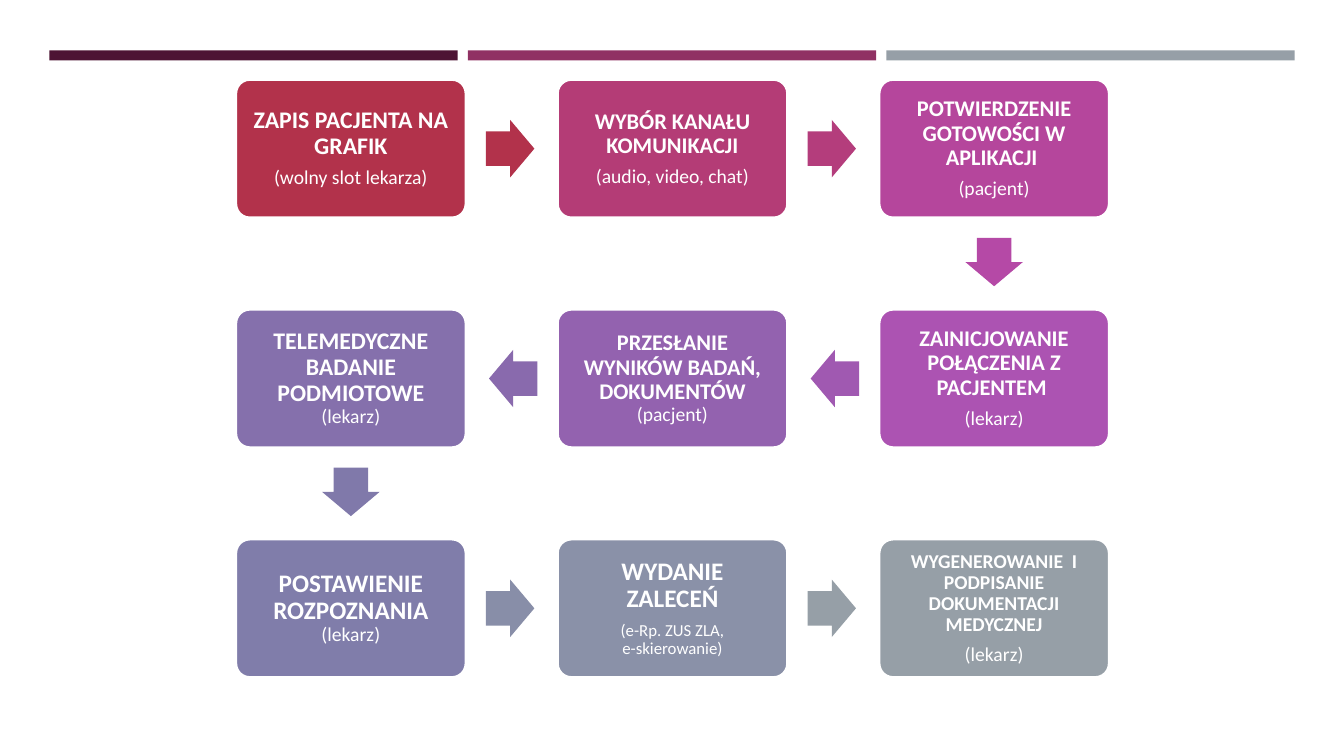
from pptx import Presentation
from pptx import util as u
from pptx.dml.color import RGBColor
from pptx.enum import shapes, text

WIDE, HIGH = 13.33, 7.5
LEFT, TOP = 2.34, 0.79
COL, ROW = 3.19, 2.28
BOX_W, BOX_H = 2.28, 1.37
ARM, SPAN, REACH = 0.48, 0.57, 0.44
INK = {
    "white": "FFFFFF",
    "bars": ["4D1434", "903163", "969FA7"],
    "boxes": ["B2324B", "B43C76", "B5469C", "AC53B2", "9362AF",
              "8570AC", "807DAA", "8A91A8", "969FA7"],
    "arrows": ["B2324B", "B43D7C", "B549A6", "A059B1", "896AAD",
               "8079AA", "888EA8", "969FA7"],
}
SPOTS = [(0, 0), (1, 0), (2, 0), (2, 1), (1, 1), (0, 1), (0, 2), (1, 2), (2, 2)]
TURNS = {(1, 0): 0, (0, 1): 90, (-1, 0): 180}
STEPS = [
    [[("ZAPIS PACJENTA NA GRAFIK", 17, True)], [("(wolny slot lekarza)", 14, False)]],
    [[("WYBÓR KANAŁU KOMUNIKACJI", 16, True)], [("(audio, video, chat)", 14, False)]],
    [[("POTWIERDZENIE GOTOWOŚCI W APLIKACJI ", 16, True)], [("(pacjent)", 14, False)]],
    [[("ZAINICJOWANIE POŁĄCZENIA Z PACJENTEM ", 16, True)], [("(lekarz)", 14, False)]],
    [[("PRZESŁANIE WYNIKÓW BADAŃ, DOKUMENTÓW ", 16, True), ("(pacjent)", 14, False)]],
    [[("TELEMEDYCZNE BADANIE PODMIOTOWE ", 17, True), ("(lekarz)", 14, False)]],
    [[("POSTAWIENIE ROZPOZNANIA ", 18, True), ("(lekarz)", 14, False)]],
    [[("WYDANIE ZALECEŃ", 18, True)], [("(e-Rp. ZUS ZLA,\ve-skierowanie)", 12, False)]],
    [[("WYGENEROWANIE  I PODPISANIE DOKUMENTACJI MEDYCZNEJ", 14, True)],
     [("(lekarz)", 14, False)]],
]


def add_form(slide, kind, x, y, w, h, fill):
    form = slide.shapes.add_shape(kind, *map(u.Inches, (x, y, w, h)))
    form.shadow.inherit = False
    form.fill.solid()
    form.fill.fore_color.rgb = RGBColor.from_string(fill)
    form.line.fill.background()
    return form


def add_run(para, words, size, bold):
    for part, line in enumerate(words.split("\v")):
        if part:
            para.add_line_break()
        run = para.add_run()
        run.text = line
        run.font.name = "Calibri"
        run.font.size = u.Pt(size)
        run.font.bold = bold
        run.font.color.rgb = RGBColor.from_string(INK["white"])


def add_text(form, paras):
    frame = form.text_frame
    frame.word_wrap = True
    frame.vertical_anchor = text.MSO_ANCHOR.MIDDLE
    frame.margin_left = frame.margin_right = u.Inches(0.11)
    frame.margin_top = frame.margin_bottom = u.Inches(0.11)
    for place, runs in enumerate(paras):
        para = frame.add_paragraph() if place else frame.paragraphs[0]
        para.alignment = text.PP_ALIGN.CENTER
        para.line_spacing = 0.9
        para.space_after = u.Pt(6)
        for run in runs:
            add_run(para, *run)


def add_step(slide, spot, fill, paras):
    col, row = spot
    box = add_form(slide, shapes.MSO_SHAPE.ROUNDED_RECTANGLE,
                   LEFT + col * COL, TOP + row * ROW, BOX_W, BOX_H, fill)
    box.adjustments[0] = 0.1
    box.line.color.rgb = RGBColor.from_string(INK["white"])
    box.line.width = u.Pt(1.75)
    add_text(box, paras)


def add_arrow(slide, spot, goal, fill):
    col, row = spot
    across, down = goal[0] - col, goal[1] - row
    mid_x = LEFT + col * COL + BOX_W / 2 + across * (BOX_W / 2 + REACH)
    mid_y = TOP + row * ROW + BOX_H / 2 + down * (BOX_H / 2 + REACH)
    arrow = add_form(slide, shapes.MSO_SHAPE.RIGHT_ARROW,
                     mid_x - ARM / 2, mid_y - SPAN / 2, ARM, SPAN, fill)
    arrow.adjustments[0] = 0.6
    arrow.adjustments[1] = 0.5
    arrow.rotation = TURNS[across, down]


def add_bars(slide):
    for col, fill in enumerate(INK["bars"]):
        add_form(slide, shapes.MSO_SHAPE.RECTANGLE,
                 0.49 + col * 4.15, 0.5, 4.05, 0.1, fill)


def main():
    deck = Presentation()
    deck.slide_width, deck.slide_height = u.Inches(WIDE), u.Inches(HIGH)
    slide = deck.slides.add_slide(deck.slide_layouts[6])
    add_bars(slide)
    for spot, fill, paras in zip(SPOTS, INK["boxes"], STEPS):
        add_step(slide, spot, fill, paras)
    for spot, goal, fill in zip(SPOTS, SPOTS[1:], INK["arrows"]):
        add_arrow(slide, spot, goal, fill)
    deck.save("out.pptx")


if __name__ == "__main__":
    main()
